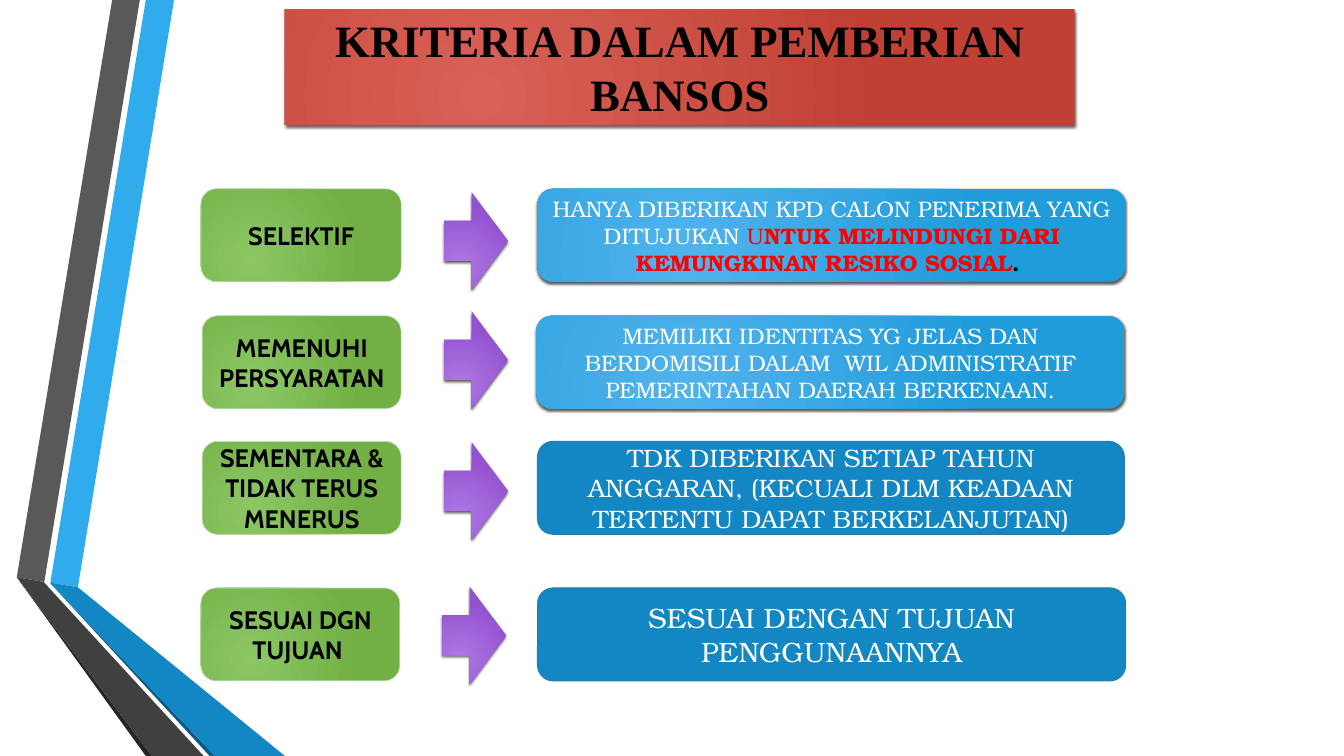
"""Build the slide on the criteria for granting social aid."""
import lxml.etree
import pptx
import pptx.dml.color
import pptx.enum.shapes
import pptx.enum.text
import pptx.oxml
import pptx.oxml.ns
import pptx.util

Pt = pptx.util.Pt
RGB = pptx.dml.color.RGBColor
SHAPE = pptx.enum.shapes.MSO_SHAPE
ANCHOR = pptx.enum.text.MSO_ANCHOR
qn = pptx.oxml.ns.qn

BLACK = RGB(0x00, 0x00, 0x00)
WHITE = RGB(0xFF, 0xFF, 0xFF)
RED = RGB(0xFF, 0x00, 0x00)
DEEP_BLUE = RGB(0x12, 0x87, 0xC3)
BLUE_EDGE = RGB(0x24, 0x7F, 0xAF)
GREEN_EDGE = RGB(0xC0, 0xDE, 0xB3)
BRIGHT_BLUE = RGB(0x30, 0xAC, 0xEC)
NAVY = RGB(0x0C, 0x5A, 0x82)
GREY = RGB(0x59, 0x59, 0x59)
DARK_GREY = RGB(0x40, 0x40, 0x40)
CHARCOAL = RGB(0x26, 0x26, 0x26)
RED_GLOW = (RGB(0xD9, 0x61, 0x57), RGB(0xC0, 0x40, 0x33))
BLUE_GLOW = (RGB(0x51, 0xB3, 0xED), RGB(0x21, 0x9C, 0xDB))
GREEN_GLOW = (RGB(0x8C, 0xC7, 0x64), RGB(0x72, 0xAF, 0x45))
PURPLE_GLOW = (RGB(0xAE, 0x78, 0xE3), RGB(0x94, 0x52, 0xD1))

SERIF = "TeX Gyre Bonum"
ROW_HEIGHT = 99.4

RIBBONS = [
    (BRIGHT_BLUE, [(54, 624.2), (83.5, 629.3), (186.5, 0), (156.2, 0)]),
    (GREY, [(149.8, 0), (120.2, 0), (18, 618.5), (47.5, 623.5)]),
    (CHARCOAL, [(18, 618.5), (156.2, 810), (162.7, 810)]),
    (NAVY, [(54, 625), (224.6, 810), (230.4, 810)]),
    (DEEP_BLUE, [(54, 624.2), (54, 625), (230.4, 810), (305.3, 810), (83.5, 629.3)]),
    (DARK_GREY, [(218.2, 810), (52.6, 630), (46.8, 623.5), (18, 618.5), (162.7, 810)]),
]

GLOWING = {"colors": BLUE_GLOW, "shadow": True}
FLAT = {"colors": (DEEP_BLUE,), "edge": (BLUE_EDGE, 1.25)}
SPACED = {"before": 18, "after": 9}

CRITERIA = [
    {"top": 202.3, "label": "SELEKTIF", "label_left": 215.3, "label_width": 214.6,
     "arrow": (475.9, 205.9), "detail_left": 576, "detail_width": 630, "look": GLOWING,
     "detail": [("HANYA DIBERIKAN KPD CALON PENERIMA YANG DITUJUKAN ", WHITE, False),
                ("U", RED, False),
                ("NTUK MELINDUNGI DARI KEMUNGKINAN RESIKO SOSIAL", RED, True),
                (". ", BLACK, True)],
     "size": 24, "spacing": {}},
    {"top": 338.4, "label": "MEMENUHI PERSYARATAN", "label_left": 216.7, "label_width": 213.1,
     "arrow": (475.9, 333.4), "detail_left": 574.6, "detail_width": 630, "look": GLOWING,
     "detail": [("MEMILIKI IDENTITAS YG JELAS DAN BERDOMISILI DALAM  WIL ADMINISTRATIF "
                 "PEMERINTAHAN DAERAH BERKENAAN.", WHITE, False)],
     "size": 24, "spacing": {}},
    {"top": 473, "label": "SEMENTARA & TIDAK TERUS MENERUS", "label_left": 216.7,
     "label_width": 213.1, "arrow": (475.9, 473.8), "detail_left": 576, "detail_width": 628.6,
     "look": FLAT,
     "detail": [("TDK DIBERIKAN SETIAP TAHUN ANGGARAN, (KECUALI DLM KEADAAN TERTENTU "
                 "DAPAT BERKELANJUTAN)", WHITE, False)],
     "size": 27, "spacing": SPACED},
    {"top": 630, "label": "SESUAI DGN TUJUAN ", "label_left": 215.3, "label_width": 213.1,
     "arrow": (473.8, 628.6), "detail_left": 576, "detail_width": 630, "look": FLAT,
     "detail": [("SESUAI DENGAN TUJUAN PENGGUNAANNYA", WHITE, False)],
     "size": 30, "spacing": SPACED},
]


def fill_glow(shape, inner, outer):
    """Fill a shape with a circular gradient."""
    shape.fill.gradient()
    for stop, color in zip(shape.fill.gradient_stops, (inner, outer)):
        stop.color.rgb = color
    linear = next(shape.element.spPr.iter(qn("a:lin")))
    gradient = linear.getparent()
    gradient.remove(linear)
    circle = lxml.etree.SubElement(gradient, qn("a:path"), path="circle")
    lxml.etree.SubElement(circle, qn("a:fillToRect"),
                          l="50000", t="100000", r="100000", b="50000")


def cast_shadow(shape):
    """Give a shape a soft shadow below it."""
    effects = shape.element.spPr.find(qn("a:effectLst"))
    shadow = lxml.etree.SubElement(effects, qn("a:outerShdw"), blurRad=str(Pt(3)),
                                   dist=str(Pt(2)), dir="5400000", rotWithShape="0")
    color = lxml.etree.SubElement(shadow, qn("a:srgbClr"), val=str(BLACK))
    lxml.etree.SubElement(color, qn("a:alpha"), val="64000")


def style_shape(shape, colors, edge=None, shadow=False):
    """Set fill, outline and shadow of a shape."""
    shape.shadow.inherit = False
    if len(colors) == 2:
        fill_glow(shape, *colors)
    else:
        shape.fill.solid()
        shape.fill.fore_color.rgb = colors[0]
    if edge:
        shape.line.color.rgb, shape.line.width = edge[0], Pt(edge[1])
    else:
        shape.line.fill.background()
    if shadow:
        cast_shadow(shape)


def add_block(slide, kind, left, top, width, height, **look):
    """Add a styled preset shape."""
    block = slide.shapes.add_shape(kind, Pt(left), Pt(top), Pt(width), Pt(height))
    style_shape(block, **look)
    return block


def write_text(block, runs, font, size, anchor=ANCHOR.MIDDLE, before=None, after=None):
    """Write centred runs of (text, color, bold) into a block."""
    frame = block.text_frame
    frame.word_wrap = True
    frame.vertical_anchor = anchor
    paragraph = frame.paragraphs[0]
    paragraph.alignment = pptx.enum.text.PP_ALIGN.CENTER
    if before is not None:
        paragraph.space_before = Pt(before)
    if after is not None:
        paragraph.space_after = Pt(after)
    for text, color, bold in runs:
        run = paragraph.add_run()
        run.text = text
        run.font.name, run.font.size, run.font.bold = font, Pt(size), bold
        run.font.color.rgb = color


def add_ribbon(slide, color, corners):
    """Add one facet of the folded ribbons on the left."""
    start, *others = [(Pt(x), Pt(y)) for x, y in corners]
    outline = slide.shapes.build_freeform(*start)
    outline.add_line_segments(others, close=True)
    style_shape(outline.convert_to_shape(), (color,))


def add_criterion(slide, row):
    """Add a label, its arrow and its explanation."""
    label = add_block(slide, SHAPE.ROUNDED_RECTANGLE, row["label_left"], row["top"],
                      row["label_width"], ROW_HEIGHT, colors=GREEN_GLOW, edge=(GREEN_EDGE, 0.75))
    write_text(label, [(row["label"], BLACK, True)], "Cabin", 27)
    detail = add_block(slide, SHAPE.ROUNDED_RECTANGLE, row["detail_left"], row["top"],
                       row["detail_width"], ROW_HEIGHT, **row["look"])
    write_text(detail, row["detail"], SERIF, row["size"], **row["spacing"])
    arrow = add_block(slide, SHAPE.RIGHT_ARROW, *row["arrow"], 68.4, 104.4,
                      colors=PURPLE_GLOW, shadow=True)
    arrow.adjustments[0], arrow.adjustments[1] = 0.41, 0.57


def main():
    """Build and save the slide."""
    deck = pptx.Presentation()
    deck.slide_width, deck.slide_height = Pt(1440), Pt(810)
    slide = deck.slides.add_slide(deck.slide_layouts[6])
    for color, corners in RIBBONS:
        add_ribbon(slide, color, corners)
    title = add_block(slide, SHAPE.RECTANGLE, 305.3, 10, 846, 123.8,
                      colors=RED_GLOW, shadow=True)
    write_text(title, [("KRITERIA DALAM PEMBERIAN BANSOS", BLACK, True)],
               "Times New Roman", 48, anchor=ANCHOR.TOP)
    for row in CRITERIA:
        add_criterion(slide, row)
    deck.save("out.pptx")


if __name__ == "__main__":
    main()
